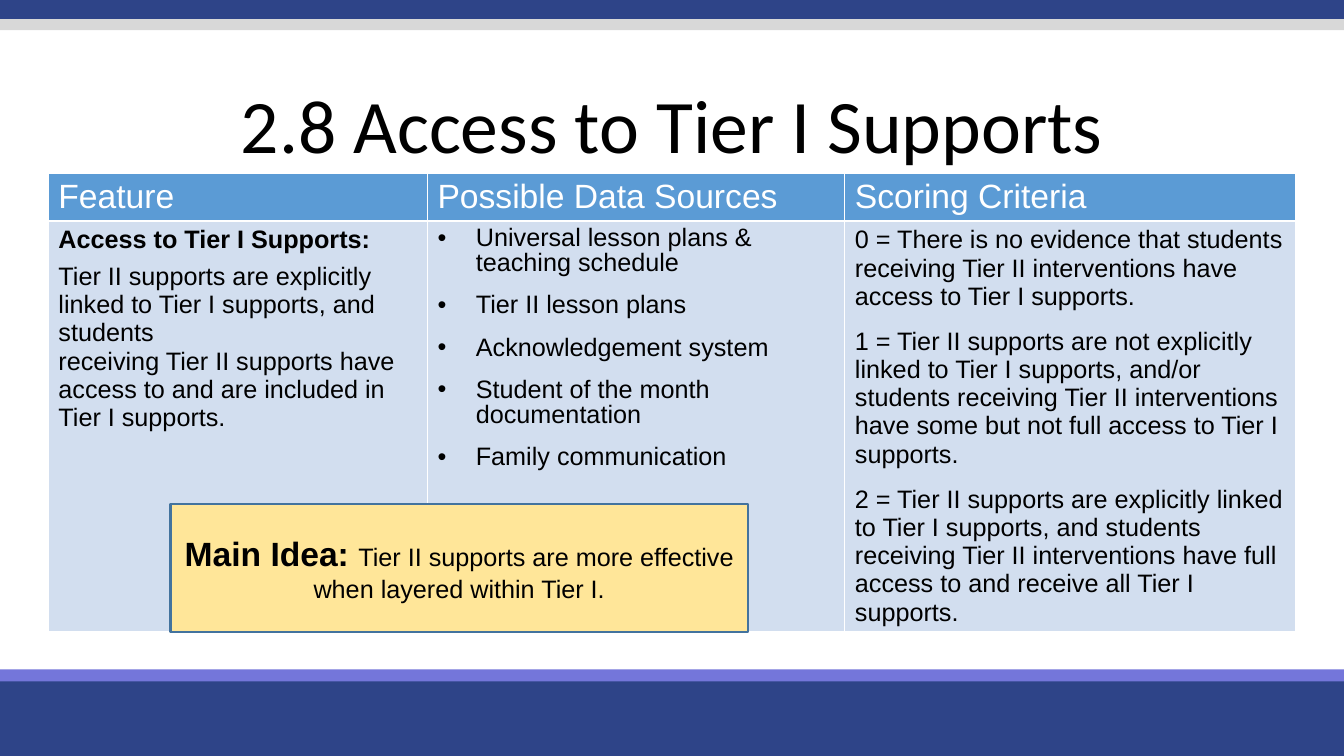
from lxml.etree import SubElement
from pptx import Presentation
from pptx.dml.color import RGBColor
from pptx.enum.shapes import MSO_SHAPE as Preset
from pptx.enum.text import MSO_ANCHOR as Anchor, MSO_AUTO_SIZE as AutoSize, PP_ALIGN as Align
from pptx.oxml.ns import qn
from pptx.util import Inches, Pt

WIDTH, HEIGHT = 13.33, 7.5
BLACK, WHITE = "000000", "FFFFFF"
TITLE = "2.8 Access to Tier I Supports"
BANDS = [
    (0, 0.19, "2E4488"),
    (0.19, 0.11, "D8D8D8"),
    (6.7, 0.8, "2E4488"),
    (6.64, 0.12, "7476DA"),
]
HEADERS = ["Feature", "Possible Data Sources", "Scoring Criteria"]
FEATURE = [
    ("Access to Tier I Supports:", {"bold": True, "after": 6}),
    ("Tier II supports are explicitly linked to Tier I supports, and students", {}),
    ("receiving Tier II supports have access to and are included in Tier I supports.", {}),
]
SOURCES = [
    "Universal lesson plans & teaching schedule",
    "Tier II lesson plans",
    "Acknowledgement system",
    "Student of the month documentation",
    "Family communication",
]
CRITERIA = [
    "0 = There is no evidence that students receiving Tier II interventions have access to Tier I supports.",
    "1 = Tier II supports are not explicitly linked to Tier I supports, and/or students receiving "
    "Tier II interventions have some but not full access to Tier I supports.",
    "2 = Tier II supports are explicitly linked to Tier I supports, and students receiving "
    "Tier II interventions have full access to and receive all Tier I supports.",
]
MAIN_IDEA = [
    ("Main Idea: ", {"size": 24, "bold": True}),
    ("Tier II supports are more effective when layered within Tier I.", {}),
]
COLUMNS = [3.76, 4.14, 4.47]
ROWS = [0.47, 4.06]
TABLE_TOP = 1.72


def color(value):
    return RGBColor.from_string(value)


def add_run(paragraph, text, size=18, bold=False, ink=BLACK, name="Arial"):
    run = paragraph.add_run()
    run.text = text
    run.font.size = Pt(size)
    run.font.bold = bold
    run.font.name = name
    run.font.color.rgb = color(ink)


def add_bullet(paragraph):
    properties = paragraph._p.get_or_add_pPr()
    properties.set("marL", str(Inches(0.38)))
    properties.set("indent", str(-Inches(0.38)))
    SubElement(properties, qn("a:buFont"), typeface="Arial")
    SubElement(properties, qn("a:buChar"), char="•")


def write(frame, text, after=0, bullet=False, spacing=None, align=None, **font):
    first = frame.paragraphs[0]
    paragraph = frame.add_paragraph() if first.runs else first
    paragraph.space_before = Pt(0)
    paragraph.space_after = Pt(after)
    if spacing:
        paragraph.line_spacing = spacing
    if align:
        paragraph.alignment = align
    if bullet:
        add_bullet(paragraph)
    add_run(paragraph, text, **font)


def add_box(slide, left, top, width, height, fill, line=None):
    shape = slide.shapes.add_shape(
        Preset.RECTANGLE, Inches(left), Inches(top), Inches(width), Inches(height))
    shape.shadow.inherit = False
    shape.fill.solid()
    shape.fill.fore_color.rgb = color(fill)
    if line:
        shape.line.color.rgb = color(line)
        shape.line.width = Pt(2)
    else:
        shape.line.fill.background()
    return shape


def style_cell(cell, fill):
    properties = cell._tc.get_or_add_tcPr()
    for side in ("lnL", "lnR", "lnT", "lnB"):
        border = SubElement(properties, qn(f"a:{side}"), w=str(Pt(1)))
        solid = SubElement(border, qn("a:solidFill"))
        SubElement(solid, qn("a:srgbClr"), val=WHITE)
    cell.fill.solid()
    cell.fill.fore_color.rgb = color(fill)


def spaced(lines, gap, **options):
    last = len(lines) - 1
    return [(line, {"after": gap if index < last else 0, **options})
            for index, line in enumerate(lines)]


def add_feature_table(slide):
    width = sum(COLUMNS)
    table = slide.shapes.add_table(
        len(ROWS), len(COLUMNS), Inches((WIDTH - width) / 2), Inches(TABLE_TOP),
        Inches(width), Inches(sum(ROWS))).table
    for row, height in zip(table.rows, ROWS):
        row.height = Inches(height)
    bodies = [FEATURE, spaced(SOURCES, 12, bullet=True, spacing=0.9), spaced(CRITERIA, 12)]
    for index, (width, header, body) in enumerate(zip(COLUMNS, HEADERS, bodies)):
        table.columns[index].width = Inches(width)
        top, bottom = table.cell(0, index), table.cell(1, index)
        style_cell(top, "5B9BD5")
        style_cell(bottom, "D2DEEF")
        top.vertical_anchor = Anchor.MIDDLE
        write(top.text_frame, header, size=24, ink=WHITE)
        for text, options in body:
            write(bottom.text_frame, text, **options)


def add_title(slide):
    title = slide.shapes.title
    title.left, title.top = Inches(1.42), Inches(0.88)
    title.width, title.height = Inches(10.49), Inches(0.8)
    frame = title.text_frame
    frame.auto_size = AutoSize.NONE
    frame.vertical_anchor = Anchor.MIDDLE
    write(frame, TITLE, size=54, name="Calibri", spacing=0.9, align=Align.CENTER)


def add_main_idea(slide):
    frame = add_box(slide, 1.69, 5, 5.73, 1.27, "FFE699", "43739E").text_frame
    frame.word_wrap = True
    frame.vertical_anchor = Anchor.MIDDLE
    paragraph = frame.paragraphs[0]
    paragraph.alignment = Align.CENTER
    for text, font in MAIN_IDEA:
        add_run(paragraph, text, **font)


def main():
    presentation = Presentation()
    presentation.slide_width, presentation.slide_height = Inches(WIDTH), Inches(HEIGHT)
    slide = presentation.slides.add_slide(presentation.slide_layouts[5])
    for top, height, fill in BANDS:
        add_box(slide, 0, top, WIDTH, height, fill)
    add_title(slide)
    add_feature_table(slide)
    add_main_idea(slide)
    presentation.save("out.pptx")


if __name__ == "__main__":
    main()
